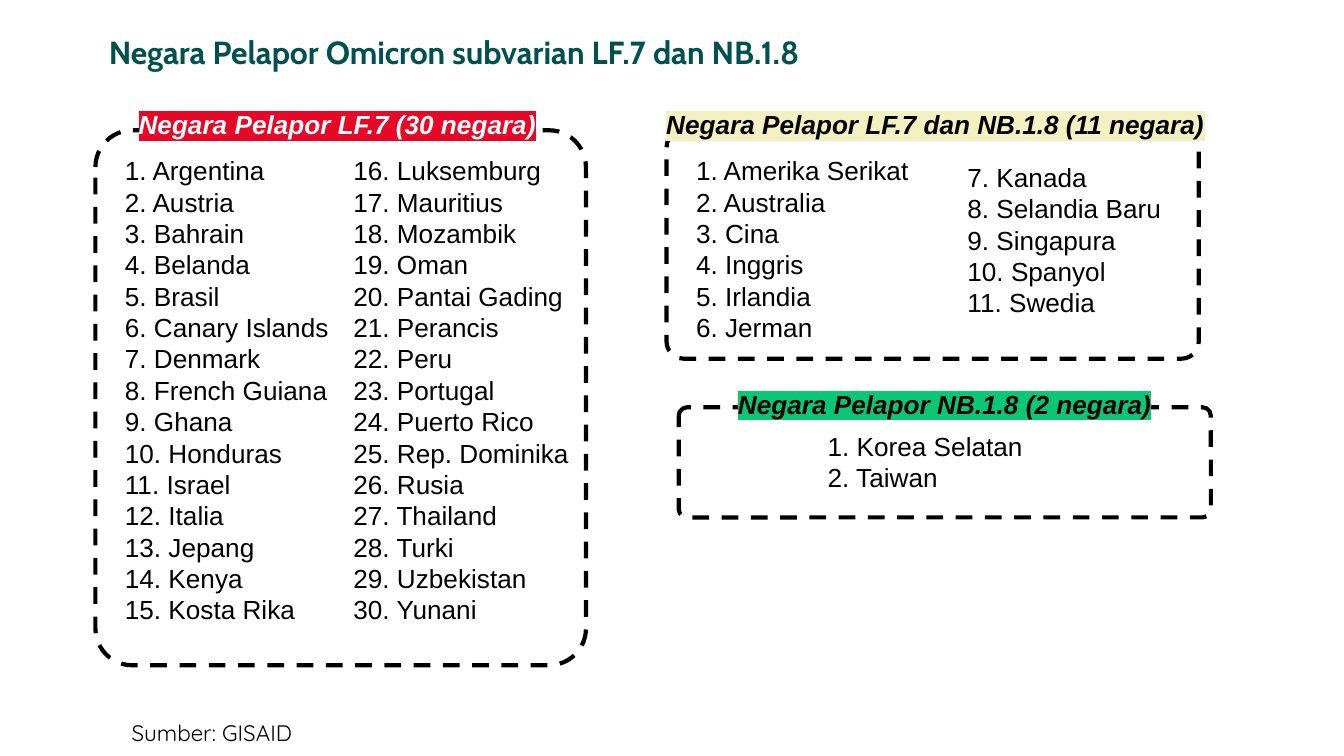
from lxml import etree
from pptx import Presentation
from pptx.dml.color import RGBColor
from pptx.enum.dml import MSO_LINE
from pptx.enum.shapes import MSO_SHAPE
from pptx.enum.text import MSO_ANCHOR, MSO_AUTO_SIZE, PP_ALIGN
from pptx.oxml.ns import qn
from pptx.util import Pt

ROUNDED = MSO_SHAPE.ROUNDED_RECTANGLE
DASH = MSO_LINE.DASH
TOP, MIDDLE = MSO_ANCHOR.TOP, MSO_ANCHOR.MIDDLE
NO_FIT, GROW = MSO_AUTO_SIZE.NONE, MSO_AUTO_SIZE.SHAPE_TO_FIT_TEXT
LEFT, CENTER = PP_ALIGN.LEFT, PP_ALIGN.CENTER
BLACK = RGBColor(0x00, 0x00, 0x00)
WHITE = RGBColor(0xFF, 0xFF, 0xFF)
TEAL = RGBColor(0x00, 0x50, 0x50)
RED = RGBColor(0xE8, 0x07, 0x26)
GREEN = RGBColor(0x0B, 0xC6, 0x72)
CREAM = RGBColor(0xF3, 0xF0, 0xC1)
INSET = Pt(7.2)

prs = Presentation()
prs.slide_width, prs.slide_height = Pt(720), Pt(405)
s = prs.slides.add_slide(prs.slide_layouts[5])


def add_text(x, y, w, h, lines, font="Arial", size=14, color=BLACK):
    sp = s.shapes.add_textbox(Pt(x), Pt(y), Pt(w), Pt(h))
    tf = sp.text_frame
    tf.word_wrap = True
    tf.vertical_anchor = TOP
    tf.margin_left = tf.margin_right = tf.margin_top = tf.margin_bottom = INSET
    tf.text = "\n".join(lines)
    for p in tf.paragraphs:
        p.font.name, p.font.size = font, Pt(size)
        p.font.color.rgb = color
    return tf


title = s.shapes.title
title.left, title.top, title.width, title.height = Pt(53.3), Pt(16.6), Pt(620.6), Pt(24.5)
tf = title.text_frame
tf.text = "Negara Pelapor Omicron subvarian LF.7 dan NB.1.8"
tf.auto_size = NO_FIT
tf.vertical_anchor = MIDDLE
tf.margin_left = tf.margin_right = Pt(5)
tf.margin_top = tf.margin_bottom = Pt(2.9)
p = tf.paragraphs[0]
p.alignment = LEFT
p.line_spacing = 0.9
p.font.name, p.font.size, p.font.bold = "Cabin", Pt(17.1), True
p.font.color.rgb = TEAL

for x, y, w, h in [
    (51.1, 69.8, 262.8, 286.6),
    (357.1, 69.8, 285.1, 122.4),
    (363.6, 218.2, 285.1, 59),
]:
    sp = s.shapes.add_shape(ROUNDED, Pt(x), Pt(y), Pt(w), Pt(h))
    sp.adjustments[0] = 0.075
    sp.shadow.inherit = False
    sp.fill.background()
    sp.line.color.rgb = BLACK
    sp.line.width = Pt(2.25)
    sp.line.dash_style = DASH

for x, y, w, text, color, mark in [
    (59.8, 51.1, 241.9, "Negara Pelapor LF.7 (30 negara)", WHITE, RED),
    (319.7, 51.1, 362.9, "Negara Pelapor LF.7 dan NB.1.8 (11 negara)", BLACK, CREAM),
    (324.7, 200.9, 362.9, "Negara Pelapor NB.1.8 (2 negara)", BLACK, GREEN),
]:
    p = add_text(x, y, w, 24.5, [text], color=color).paragraphs[0]
    p.alignment = CENTER
    p.font.bold = p.font.italic = True
    rPr = p.runs[0]._r.get_or_add_rPr()
    highlight = etree.SubElement(rPr, qn("a:highlight"))
    etree.SubElement(highlight, qn("a:srgbClr"), val=str(mark))

for x, y, w, h, start, countries in [
    (59.8, 75.6, 132, 269.3, 1, [
        "Argentina", "Austria", "Bahrain", "Belanda", "Brasil",
        "Canary Islands", "Denmark", "French Guiana", "Ghana", "Honduras",
        "Israel", "Italia", "Jepang", "Kenya", "Kosta Rika"]),
    (182.2, 75.6, 132, 269.3, 16, [
        "Luksemburg", "Mauritius", "Mozambik", "Oman", "Pantai Gading",
        "Perancis", "Peru", "Portugal", "Puerto Rico", "Rep. Dominika",
        "Rusia", "Thailand", "Turki", "Uzbekistan", "Yunani"]),
    (365.8, 75.6, 139.7, 116.6, 1, [
        "Amerika Serikat", "Australia", "Cina", "Inggris", "Irlandia", "Jerman"]),
    (511.2, 79.2, 139.7, 99.4, 7, [
        "Kanada", "Selandia Baru", "Singapura", "Spanyol", "Swedia"]),
    (436.3, 223.2, 139.7, 48.2, 1, ["Korea Selatan", "Taiwan"]),
]:
    lines = [f"{n}. {country}" for n, country in enumerate(countries, start)]
    add_text(x, y, w, h, lines).auto_size = GROW

add_text(63.4, 378, 169.2, 18.7, ["Sumber: GISAID"], "Quicksand", 12)

prs.save("out.pptx")
